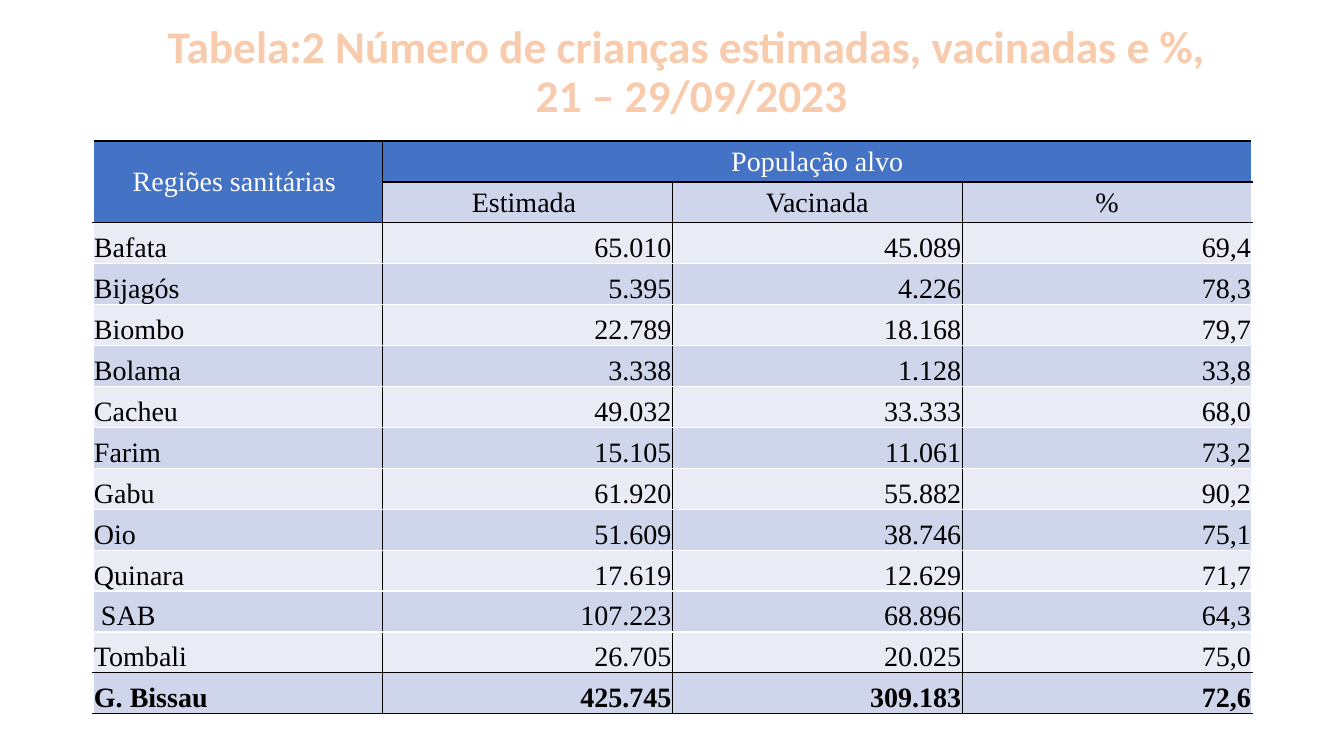
from lxml.etree import SubElement
from pptx import Presentation
from pptx.dml.color import RGBColor
from pptx.enum.text import MSO_ANCHOR, MSO_AUTO_SIZE, PP_ALIGN
from pptx.oxml.ns import qn
from pptx.util import Pt

# Content
TITLE = ["Tabela:2 Número de crianças estimadas, vacinadas e %,", " 21 – 29/09/2023"]
ROWS = [
    ("Regiões sanitárias ", "População alvo", "", ""),
    ("", "Estimada ", "Vacinada", "%"),
    ("Bafata", "65.010", "45.089", "69,4"),
    ("Bijagós", "5.395", "4.226", "78,3"),
    ("Biombo", "22.789", "18.168", "79,7"),
    ("Bolama", "3.338", "1.128", "33,8"),
    ("Cacheu", "49.032", "33.333", "68,0"),
    ("Farim", "15.105", "11.061", "73,2"),
    ("Gabu", "61.920", "55.882", "90,2"),
    ("Oio", "51.609", "38.746", "75,1"),
    ("Quinara", "17.619", "12.629", "71,7"),
    (" SAB", "107.223", "68.896", "64,3"),
    ("Tombali", "26.705", "20.025", "75,0"),
    ("G. Bissau", "425.745", "309.183", "72,6"),
]
HEADER_ROWS = 2
N_ROWS, N_COLS = len(ROWS), len(ROWS[0])
BLACK, WHITE, BLUE = "000000", "FFFFFF", "4472C4"
BANDS = ("E9EBF5", "CFD5EA")
BLACK_RULES = {0, 1, HEADER_ROWS, N_ROWS - 1, N_ROWS}

# Layout in px
SLIDE = (1344, 756)
TITLE_BOX = (107, 28, 1159, 90)
TABLE_BOX = (93, 141, 1159, 573)


def px(n):
    return round(n * 914400 / 100.8)


def rgb(value):
    return RGBColor.from_string(value)


def add_line(parent, tag, color, width):
    ln = SubElement(parent, qn(tag), w=str(Pt(width)))
    fill = SubElement(ln, qn("a:solidFill"))
    SubElement(fill, qn("a:srgbClr"), val=color)


def add_run(p, text, font, size, color, bold):
    r = p.add_run()
    r.text = text
    r.font.name, r.font.size, r.font.bold = font, Pt(size), bold
    r.font.color.rgb = rgb(color)
    return r


def format_cell(cell, row, col):
    header = row < HEADER_ROWS
    main_header = row == 0

    # Borders: black between columns and around the header and total rows
    right, bottom = col + cell.span_width, row + cell.span_height
    tc_pr = cell._tc.get_or_add_tcPr()
    for tag, is_black in (
        ("a:lnL", col > 0),
        ("a:lnR", right < N_COLS),
        ("a:lnT", row in BLACK_RULES),
        ("a:lnB", bottom in BLACK_RULES),
    ):
        add_line(tc_pr, tag, BLACK if is_black else WHITE, 1)

    # Fill and placement
    cell.fill.solid()
    cell.fill.fore_color.rgb = rgb(BLUE if main_header else BANDS[row % 2])
    cell.margin_left = cell.margin_right = cell.margin_top = px(1)
    cell.margin_bottom = 0
    cell.vertical_anchor = MSO_ANCHOR.MIDDLE if header else MSO_ANCHOR.BOTTOM

    # Text
    p = cell.text_frame.paragraphs[0]
    if header:
        p.alignment = PP_ALIGN.CENTER
    else:
        p.alignment = PP_ALIGN.RIGHT if col else PP_ALIGN.LEFT
    add_run(p, ROWS[row][col], "Times New Roman", 20,
            WHITE if main_header else BLACK, row == N_ROWS - 1)


def add_title(slide):
    sp = slide.shapes.title
    sp.left, sp.top, sp.width, sp.height = map(px, TITLE_BOX)
    tf = sp.text_frame
    tf.word_wrap = True
    tf.auto_size = MSO_AUTO_SIZE.NONE
    tf.vertical_anchor = MSO_ANCHOR.MIDDLE
    p = tf.paragraphs[0]
    p.alignment = PP_ALIGN.CENTER
    p.line_spacing = 0.9
    for i, text in enumerate(TITLE):
        if i:
            p.add_line_break()
        r = add_run(p, text, "Calibri", 32.4, "F8CBAD", True)
        # The outline comes first among the run properties
        r_pr = r.font._rPr
        add_line(r_pr, "a:ln", "00B0F0", 1.75)
        r_pr.insert(0, r_pr[-1])


def add_population_table(slide):
    table = slide.shapes.add_table(N_ROWS, N_COLS, *map(px, TABLE_BOX)).table
    for column in table.columns:
        column.width = px(TABLE_BOX[2] / N_COLS)
    for row in table.rows:
        row.height = px(TABLE_BOX[3] / N_ROWS)
    table.cell(0, 0).merge(table.cell(1, 0))
    table.cell(0, 1).merge(table.cell(0, N_COLS - 1))
    for row in range(N_ROWS):
        for col in range(N_COLS):
            cell = table.cell(row, col)
            if not cell.is_spanned:
                format_cell(cell, row, col)


def main():
    prs = Presentation()
    prs.slide_width, prs.slide_height = map(px, SLIDE)
    slide = prs.slides.add_slide(prs.slide_layouts[5])
    add_title(slide)
    add_population_table(slide)
    prs.save("out.pptx")


if __name__ == "__main__":
    main()
